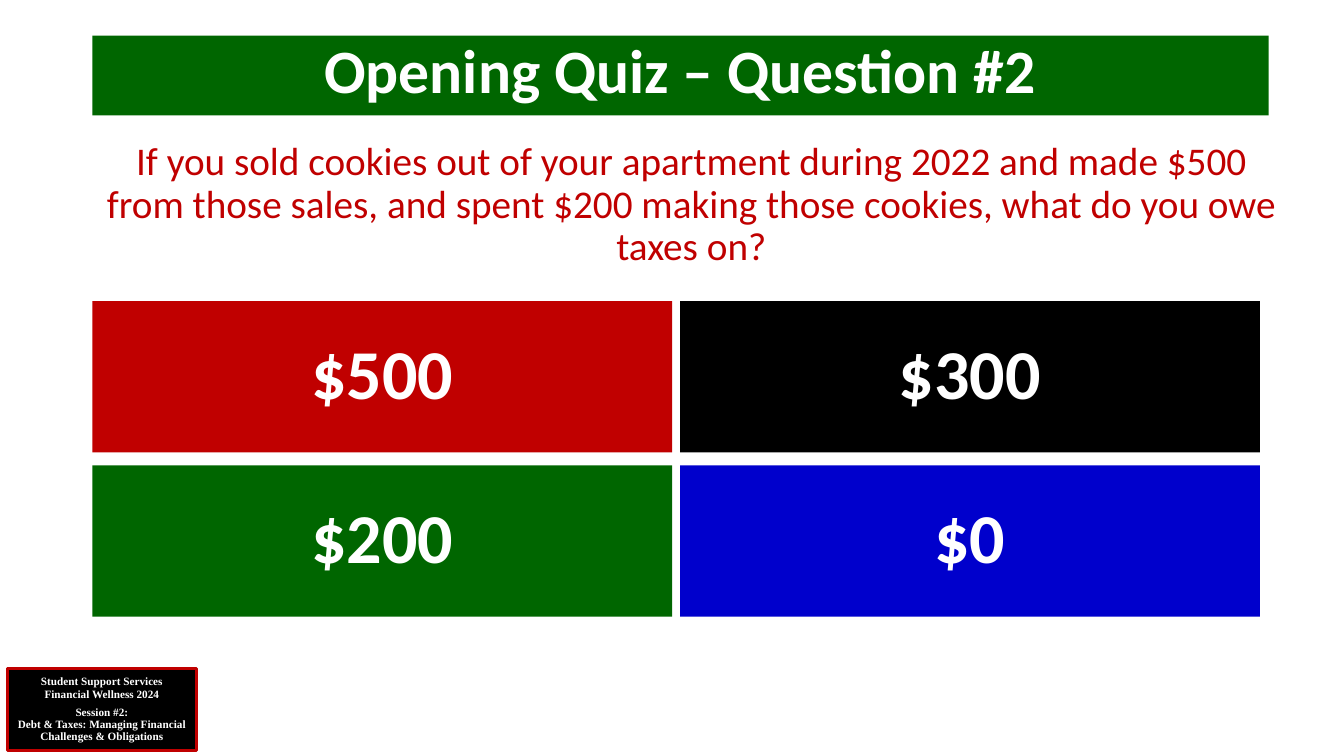
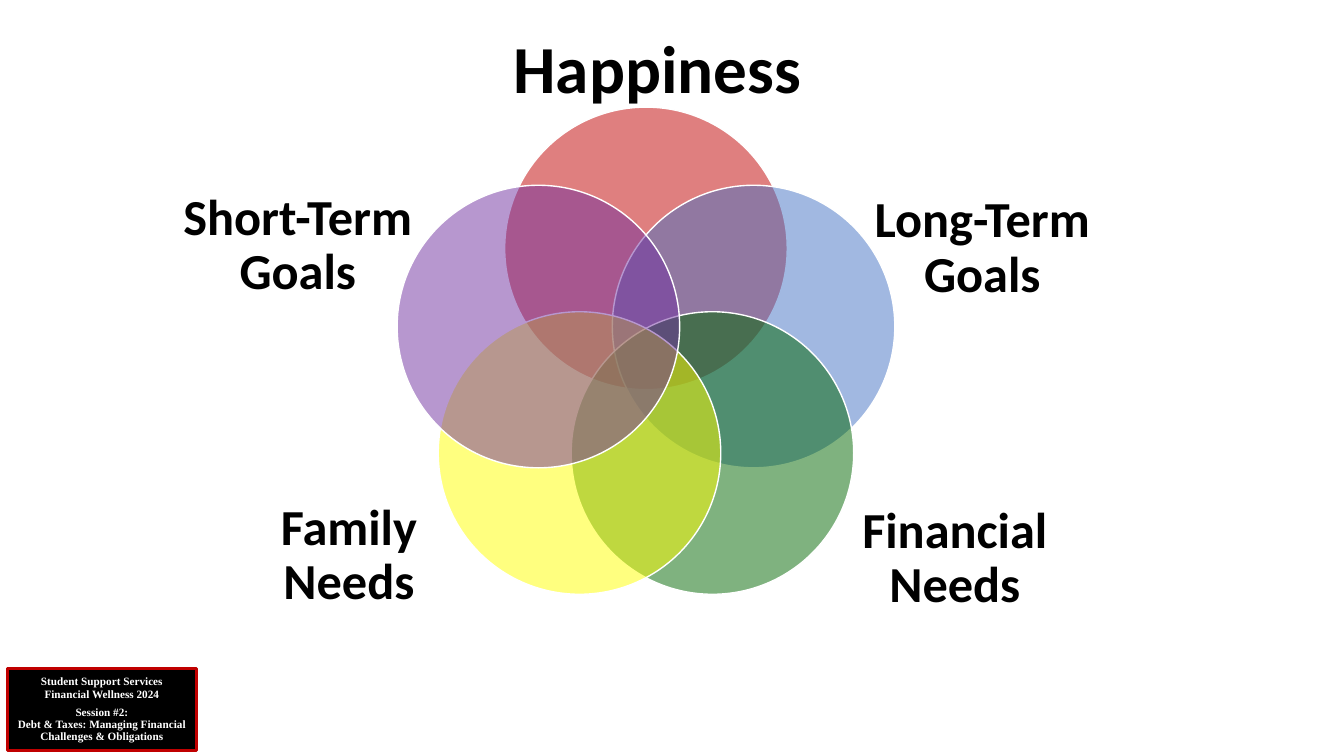
import math

import pptx
import pptx.util
from lxml import etree
from pptx.dml.color import RGBColor
from pptx.enum.shapes import MSO_SHAPE
from pptx.enum.text import MSO_ANCHOR, MSO_AUTO_SIZE, PP_ALIGN
from pptx.oxml.ns import qn
from pptx.util import Cm

BLACK = RGBColor(0x00, 0x00, 0x00)
WHITE = RGBColor(0xFF, 0xFF, 0xFF)
RED = RGBColor(0xC0, 0x00, 0x00)
GREEN = RGBColor(0x00, 0x66, 0x00)
BLUE = RGBColor(0x00, 0x00, 0xCC)
SKY = RGBColor(0x44, 0x72, 0xC4)
YELLOW = RGBColor(0xFF, 0xFF, 0x00)
PURPLE = RGBColor(0x70, 0x30, 0xA0)

SANS, SERIF = "Calibri", "Times New Roman"
TITLE_AND_CONTENT, TITLE_ONLY = 1, 5

FOOTER_BOX = (0.18, 16.84, 4.78, 2.08)
TITLE_BOX = (2.33, 0.9, 29.64, 2.01)
QUESTION_BOX = (2.33, 3.45, 30.18, 3.9)
ANSWERS_BOX = (2.33, 7.59, 29.42, 7.95)
VENN_BOX = (3.81, 0.5, 24.64, 16.18)


def place(sp, box):
    sp.left, sp.top, sp.width, sp.height = (Cm(v) for v in box)


def add_filled(s, kind, box, fill, line=None, line_width=0):
    sp = s.shapes.add_shape(kind, *(Cm(v) for v in box))
    sp.shadow.inherit = False
    sp.fill.solid()
    sp.fill.fore_color.rgb = fill
    if line is None:
        sp.line.fill.background()
    else:
        sp.line.color.rgb = line
        sp.line.width = pptx.util.Pt(line_width)
    return sp


def style(p, size, color, bold=True, name=SANS):
    p.alignment = PP_ALIGN.CENTER
    p.line_spacing = 0.9
    p.space_before = pptx.util.Pt(0)
    p.font.size = pptx.util.Pt(size)
    p.font.bold = bold
    p.font.name = name
    p.font.color.rgb = color


def write(sp, text, size, color, bold=True, name=SANS, anchor=MSO_ANCHOR.MIDDLE, inset=None):
    tf = sp.text_frame
    tf.word_wrap = True
    tf.auto_size = MSO_AUTO_SIZE.NONE
    tf.vertical_anchor = anchor
    if inset is not None:
        tf.margin_left = tf.margin_right = tf.margin_top = tf.margin_bottom = Cm(inset)
    tf.text = text
    for p in tf.paragraphs:
        style(p, size, color, bold, name)
    return tf


def add_footer(s, box):
    sp = add_filled(s, MSO_SHAPE.RECTANGLE, box, BLACK, RED, 2.25)
    text = ("Student Support Services\nFinancial Wellness 2024\n"
            "Session #2:\vDebt & Taxes: Managing Financial Challenges & Obligations")
    tf = write(sp, text, 8, WHITE, name=SERIF, inset=0.2)
    tf.paragraphs[-1].space_before = pptx.util.Pt(4.4)


def new_slide(prs, layout):
    s = prs.slides.add_slide(prs.slide_layouts[layout])
    add_footer(s, FOOTER_BOX)
    return s


def set_title(s, text, box, size, color, fill=None, anchor=MSO_ANCHOR.MIDDLE, inset=None):
    sp = s.shapes.title
    place(sp, box)
    if fill is not None:
        sp.fill.solid()
        sp.fill.fore_color.rgb = fill
    write(sp, text, size, color, anchor=anchor, inset=inset)


def remove_bullet(p):
    pPr = p._p.get_or_add_pPr()
    pPr.set("marL", "0")
    pPr.set("indent", "0")
    bullet = etree.Element(qn("a:buNone"))
    pPr.insert_element_before(bullet, "a:tabLst", "a:defRPr", "a:extLst")


def set_question(s, text, box):
    sp = s.placeholders[1]
    place(sp, box)
    tf = write(sp, text, 28, RED, bold=False, anchor=MSO_ANCHOR.TOP)
    remove_bullet(tf.paragraphs[0])


def add_answers(s, box, answers, columns=2, gap_x=0.2, gap_y=0.33):
    left, top, width, height = box
    rows = math.ceil(len(answers) / columns)
    w = (width - gap_x * (columns - 1)) / columns
    h = (height - gap_y * (rows - 1)) / rows
    for i, (text, fill) in enumerate(answers):
        row, col = divmod(i, columns)
        tile = (left + col * (w + gap_x), top + row * (h + gap_y), w, h)
        write(add_filled(s, MSO_SHAPE.RECTANGLE, tile, fill), text, 50, WHITE)


def set_alpha(sp, percent):
    color = sp.fill._xPr.find(qn("a:solidFill"))[0]
    etree.SubElement(color, qn("a:alpha")).set("val", str(percent * 1000))


def add_venn(s, box, top_label, side_labels):
    left, top, width, height = box
    set_title(s, top_label, (left + 8.63, top, 8.26, 2.64), 48, BLACK, inset=0)
    center_x, center_y = left + 12.47, top + 8.61
    ring, diameter = 2.85, 7.12
    for i, fill in enumerate((RED, SKY, GREEN, YELLOW, PURPLE)):
        angle = math.tau * i / 5
        x = center_x + ring * math.sin(angle) - diameter / 2
        y = center_y - ring * math.cos(angle) - diameter / 2
        circle = add_filled(s, MSO_SHAPE.OVAL, (x, y, diameter, diameter), fill, WHITE, 1)
        set_alpha(circle, 50)
    for text, dx, dy, w in side_labels:
        label = s.shapes.add_textbox(Cm(left + dx), Cm(top + dy), Cm(w), Cm(5.18))
        write(label, text, 36, BLACK, inset=0)


def build_quiz(prs):
    s = new_slide(prs, TITLE_AND_CONTENT)
    set_title(s, "Opening Quiz – Question #2", TITLE_BOX, 44, WHITE, GREEN, MSO_ANCHOR.TOP)
    set_question(s, "If you sold cookies out of your apartment during 2022 and made $500 "
                    "from those sales, and spent $200 making those cookies, "
                    "what do you owe taxes on?", QUESTION_BOX)
    add_answers(s, ANSWERS_BOX,
                [("$500", RED), ("$300", BLACK), ("$200", GREEN), ("$0", BLUE)])


def build_happiness(prs):
    s = new_slide(prs, TITLE_ONLY)
    add_venn(s, VENN_BOX, "Happiness", [
        ("Long-Term Goals", 17.25, 3.18, 7.39),
        ("Financial Needs", 17.6, 11, 5.31),
        ("Family Needs", 2.33, 10.93, 5.31),
        ("Short-Term Goals", 0, 3.11, 7.39),
    ])


def main():
    prs = pptx.Presentation()
    prs.slide_width, prs.slide_height = Cm(33.87), Cm(19.05)
    build_quiz(prs)
    build_happiness(prs)
    prs.save("out.pptx")


if __name__ == "__main__":
    main()
